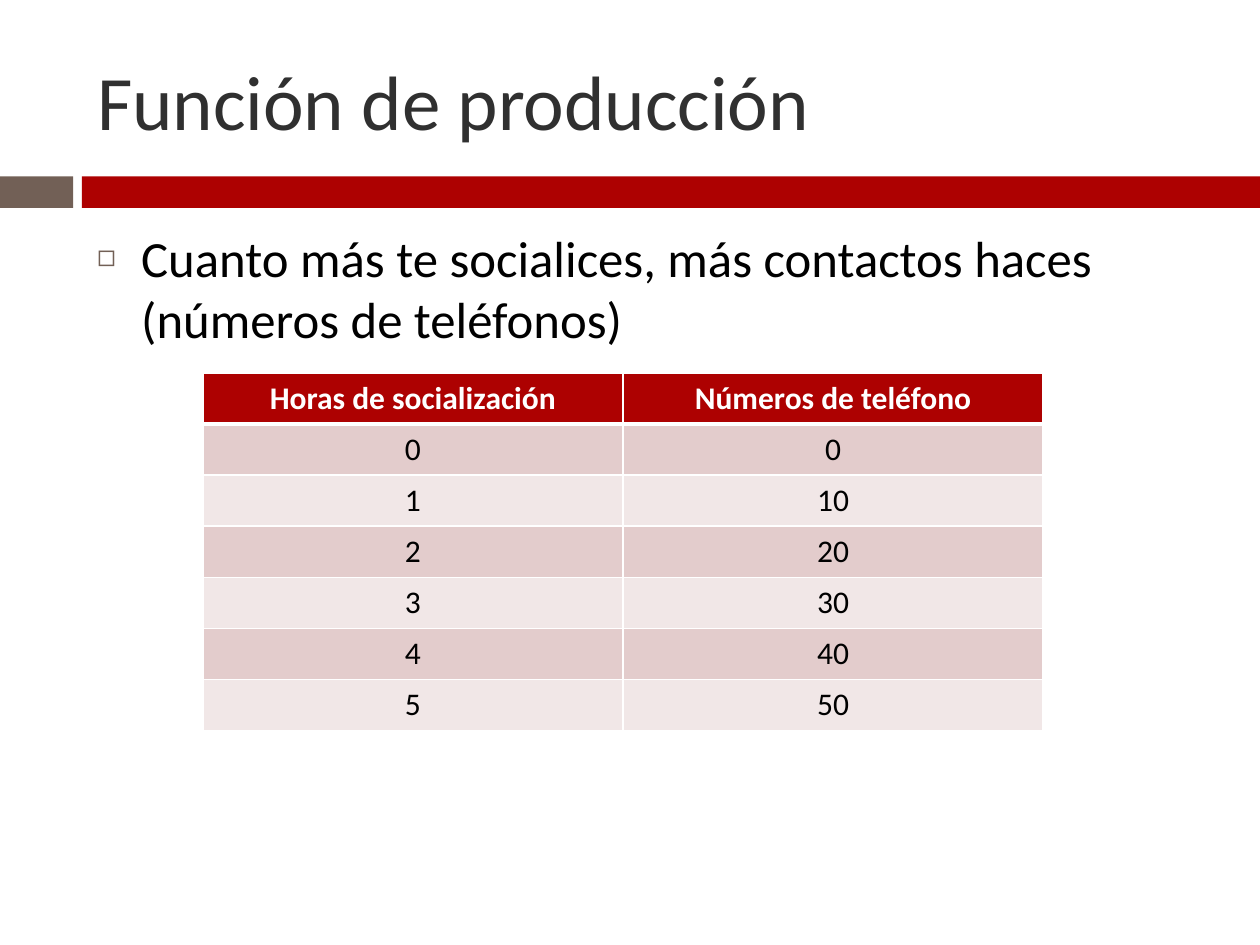
from dataclasses import dataclass

from lxml.etree import SubElement
from pptx import Presentation
from pptx.dml.color import RGBColor
from pptx.enum.shapes import MSO_SHAPE
from pptx.enum.text import MSO_ANCHOR, MSO_AUTO_SIZE, PP_ALIGN
from pptx.oxml import parse_xml
from pptx.oxml.ns import nsdecls, qn
from pptx.util import Inches, Pt

FONT = "Calibri"
RED, BROWN, WHITE, BLACK = "AD0101", "726056", "FFFFFF", "000000"
BANDS = ("E3CCCC", "F1E7E7")


@dataclass
class Box:
    left: float
    top: float
    width: float
    height: float

    def lengths(self) -> tuple:
        return tuple(map(Inches, (self.left, self.top, self.width, self.height)))


def color(value: str) -> RGBColor:
    return RGBColor.from_string(value)


def style_font(paragraph, size: float, value: str, bold: bool = False) -> None:
    font = paragraph.font
    font.name, font.size, font.bold = FONT, Pt(size), bold
    font.color.rgb = color(value)


def add_bar(slide, box: Box, fill: str) -> None:
    shape = slide.shapes.add_shape(MSO_SHAPE.RECTANGLE, *box.lengths())
    shape.shadow.inherit = False
    shape.fill.solid()
    shape.fill.fore_color.rgb = color(fill)
    shape.line.fill.background()


def fill_placeholder(shape, box: Box, text: str, size: float, value: str, anchor):
    shape.left, shape.top, shape.width, shape.height = box.lengths()
    frame = shape.text_frame
    frame.text = text
    frame.word_wrap = True
    frame.auto_size = MSO_AUTO_SIZE.NONE
    frame.vertical_anchor = anchor
    paragraph = frame.paragraphs[0]
    paragraph.alignment = PP_ALIGN.LEFT
    style_font(paragraph, size, value)
    return paragraph


def add_bullet(paragraph, character: str, value: str, percent: int, indent: float) -> None:
    properties = paragraph._p.get_or_add_pPr()
    properties.set("marL", str(Inches(indent)))
    properties.set("indent", str(-Inches(indent)))
    bullet_parts = (
        f'<a:buClr {nsdecls("a")}><a:srgbClr val="{value}"/></a:buClr>',
        f'<a:buSzPct {nsdecls("a")} val="{percent * 1000}"/>',
        f'<a:buFont {nsdecls("a")} typeface="{FONT}"/>',
        f'<a:buChar {nsdecls("a")} char="{character}"/>',
    )
    # Bullet elements come before the default run properties
    run_defaults = properties.find(qn("a:defRPr"))
    for part in bullet_parts:
        run_defaults.addprevious(parse_xml(part))


def set_borders(cell, widths: dict[str, float], value: str) -> None:
    properties = cell._tc.get_or_add_tcPr()
    for position, (side, width) in enumerate(widths.items()):
        line = parse_xml(f'<a:ln{side} {nsdecls("a")} w="{Pt(width)}"/>')
        fill = SubElement(line, qn("a:solidFill"))
        SubElement(fill, qn("a:srgbClr"), val=value)
        properties.insert(position, line)


def add_data_table(slide, box: Box, rows: list[tuple[str, str]]) -> None:
    table = slide.shapes.add_table(len(rows), len(rows[0]), *box.lengths()).table
    for row_index, values in enumerate(rows):
        header = row_index == 0
        fill = RED if header else BANDS[(row_index - 1) % 2]
        top = 3 if row_index == 1 else 1
        bottom = 3 if header else 1
        for column_index, text in enumerate(values):
            cell = table.cell(row_index, column_index)
            cell.text = text
            cell.fill.solid()
            cell.fill.fore_color.rgb = color(fill)
            set_borders(cell, {"L": 1, "R": 1, "T": top, "B": bottom}, WHITE)
            paragraph = cell.text_frame.paragraphs[0]
            paragraph.alignment = PP_ALIGN.CENTER
            style_font(paragraph, 18, WHITE if header else BLACK, header)


def main() -> None:
    presentation = Presentation()
    presentation.slide_width, presentation.slide_height = Inches(10), Inches(7.5)
    slide = presentation.slides.add_slide(presentation.slide_layouts[1])

    # Divider bars
    add_bar(slide, Box(0, 1.4, 0.58, 0.25), BROWN)
    add_bar(slide, Box(0.65, 1.4, 9.35, 0.25), RED)

    # Title and bullet
    title, body = slide.placeholders
    fill_placeholder(title, Box(0.67, 0.25, 8.92, 1.08), "Función de producción",
                     44, "303030", MSO_ANCHOR.MIDDLE)
    bullet = fill_placeholder(
        body, Box(0.67, 1.75, 8.92, 4.92),
        "Cuanto más te socialices, más contactos haces (números de teléfonos)",
        29, BLACK, MSO_ANCHOR.TOP)
    bullet.space_before = Pt(7)
    add_bullet(bullet, "◻", BROWN, 60, 0.35)

    # Ten phone numbers per hour of socializing
    rows = [("Horas de socialización", "Números de teléfono")]
    rows += [(str(hours), str(10 * hours)) for hours in range(6)]
    add_data_table(slide, Box(1.61, 2.96, 6.67, 2.83), rows)

    presentation.save("out.pptx")


if __name__ == "__main__":
    main()
